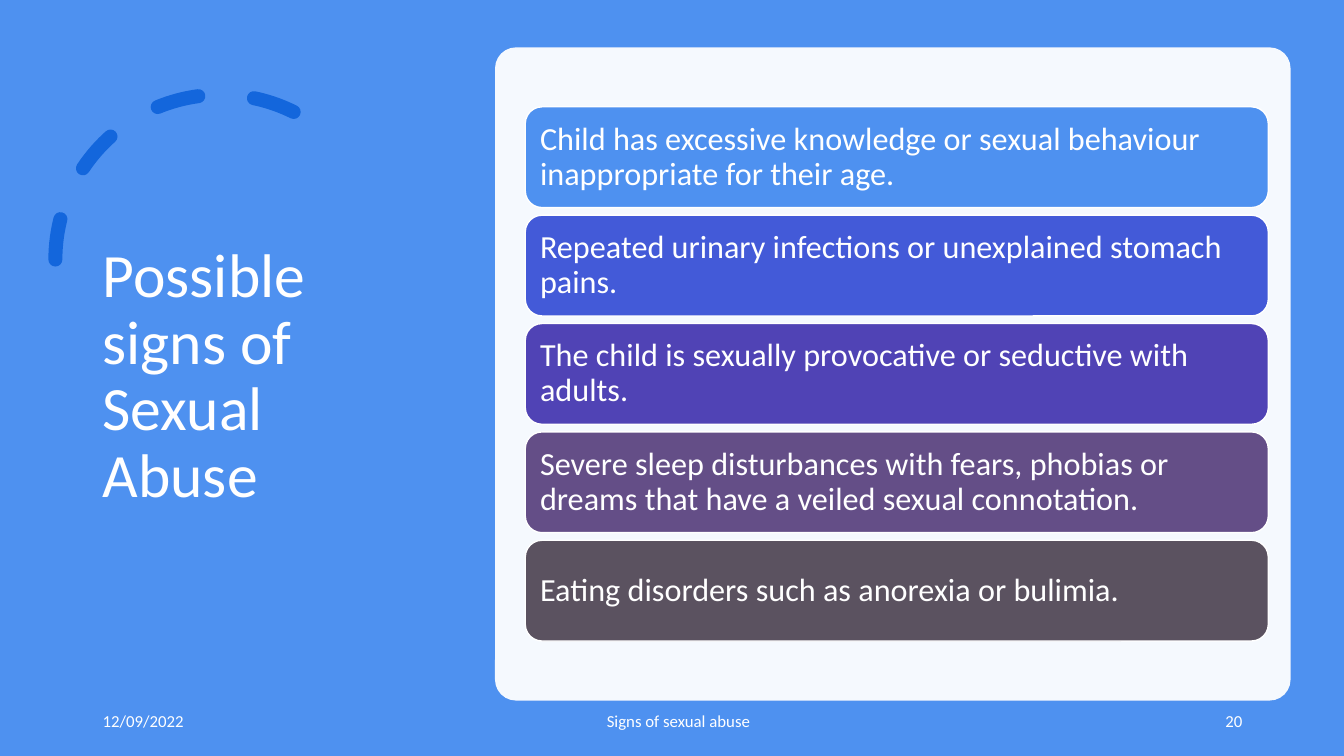
from lxml import etree
from pptx import Presentation
from pptx.dml.color import RGBColor
from pptx.enum import shapes, text
from pptx.oxml.ns import qn
from pptx.util import Inches, Pt

WHITE = RGBColor(0xFF, 0xFF, 0xFF)
BLUE = RGBColor(0x4E, 0x91, 0xF0)
DEEP_BLUE = RGBColor(0x13, 0x66, 0xDC)
INDIGO = RGBColor(0x43, 0x5A, 0xD8)
VIOLET = RGBColor(0x50, 0x43, 0xB5)
PLUM = RGBColor(0x64, 0x4E, 0x87)
GREY = RGBColor(0x5B, 0x52, 0x60)

prs = Presentation()
prs.slide_width, prs.slide_height = Inches(13.33), Inches(7.5)
s = prs.slides.add_slide(prs.slide_layouts[6])


def add_shape(kind, left, top, width, height, fill=None):
    sp = s.shapes.add_shape(kind, Inches(left), Inches(top), Inches(width), Inches(height))
    sp.shadow.inherit = False
    sp.line.fill.background()
    if fill is None:
        sp.fill.background()
    else:
        sp.fill.solid()
        sp.fill.fore_color.rgb = fill
    return sp


def write(sp, words, size, align=text.PP_ALIGN.LEFT, spacing=None):
    tf = sp.text_frame
    tf.word_wrap = True
    tf.vertical_anchor = text.MSO_ANCHOR.MIDDLE
    p = tf.paragraphs[0]
    p.text = words
    p.alignment = align
    p.line_spacing = spacing
    p.font.name, p.font.size = "Calibri", Pt(size)
    p.font.color.rgb = WHITE


# Blue backdrop
add_shape(shapes.MSO_SHAPE.RECTANGLE, 0, 0, 13.33, 7.5, BLUE)

# Dashed arc with round caps
arc = add_shape(shapes.MSO_SHAPE.ARC, 0.55, 0.94, 3.27, 3.27)
arc.adjustments[0] = 146.13
arc.adjustments[1] = 0
arc.line.color.rgb = DEEP_BLUE
arc.line.width = Pt(10)
ln = arc.line._get_or_add_ln()
ln.set("cap", "rnd")
etree.SubElement(ln, qn("a:prstDash")).set("val", "dash")
arc._element.spPr.find(qn("a:xfrm")).set("flipH", "1")

# Title
title = s.shapes.add_textbox(Inches(0.92), Inches(0.7), Inches(3.23), Inches(6.09))
write(title, "Possible signs of Sexual Abuse", 44, spacing=0.9)

# Pale panel
panel = add_shape(shapes.MSO_SHAPE.ROUNDED_RECTANGLE, 4.91, 0.47, 7.89, 6.48, WHITE)
panel.adjustments[0] = 0.032
color = panel._element.spPr.find(qn("a:solidFill"))[0]
etree.SubElement(color, qn("a:alpha")).set("val", "95000")

# Footer: date, topic, slide number
for left, words, align in [
    (0.92, "12/09/2022", text.PP_ALIGN.LEFT),
    (5.92, "Signs of sexual abuse", text.PP_ALIGN.LEFT),
    (9.42, "20", text.PP_ALIGN.RIGHT),
]:
    footer = s.shapes.add_textbox(Inches(left), Inches(6.95), Inches(3), Inches(0.4))
    write(footer, words, 12, align)

# Signs, one bar each
signs = [
    ("Child has excessive knowledge or sexual behaviour inappropriate for their age.", BLUE),
    ("Repeated urinary infections or unexplained stomach pains.", INDIGO),
    ("The child is sexually provocative or seductive with adults.", VIOLET),
    ("Severe sleep disturbances with fears, phobias or dreams "
     "that have a veiled sexual connotation.", PLUM),
    ("Eating disorders such as anorexia or bulimia.", GREY),
]
first_top, last_top = 1.06, 5.36
pitch = (last_top - first_top) / (len(signs) - 1)
for i, (words, fill) in enumerate(signs):
    bar = add_shape(shapes.MSO_SHAPE.ROUNDED_RECTANGLE,
                    5.21, first_top + i * pitch, 7.37, 1, fill)
    bar.line.color.rgb = WHITE
    bar.line.width = Pt(1)
    # The rounded corners add about 0.05 to each side inset
    tf = bar.text_frame
    tf.margin_left = tf.margin_right = Inches(0.1)
    tf.margin_top = tf.margin_bottom = Inches(0.1)
    write(bar, words, 23, spacing=0.9)

prs.save("out.pptx")
